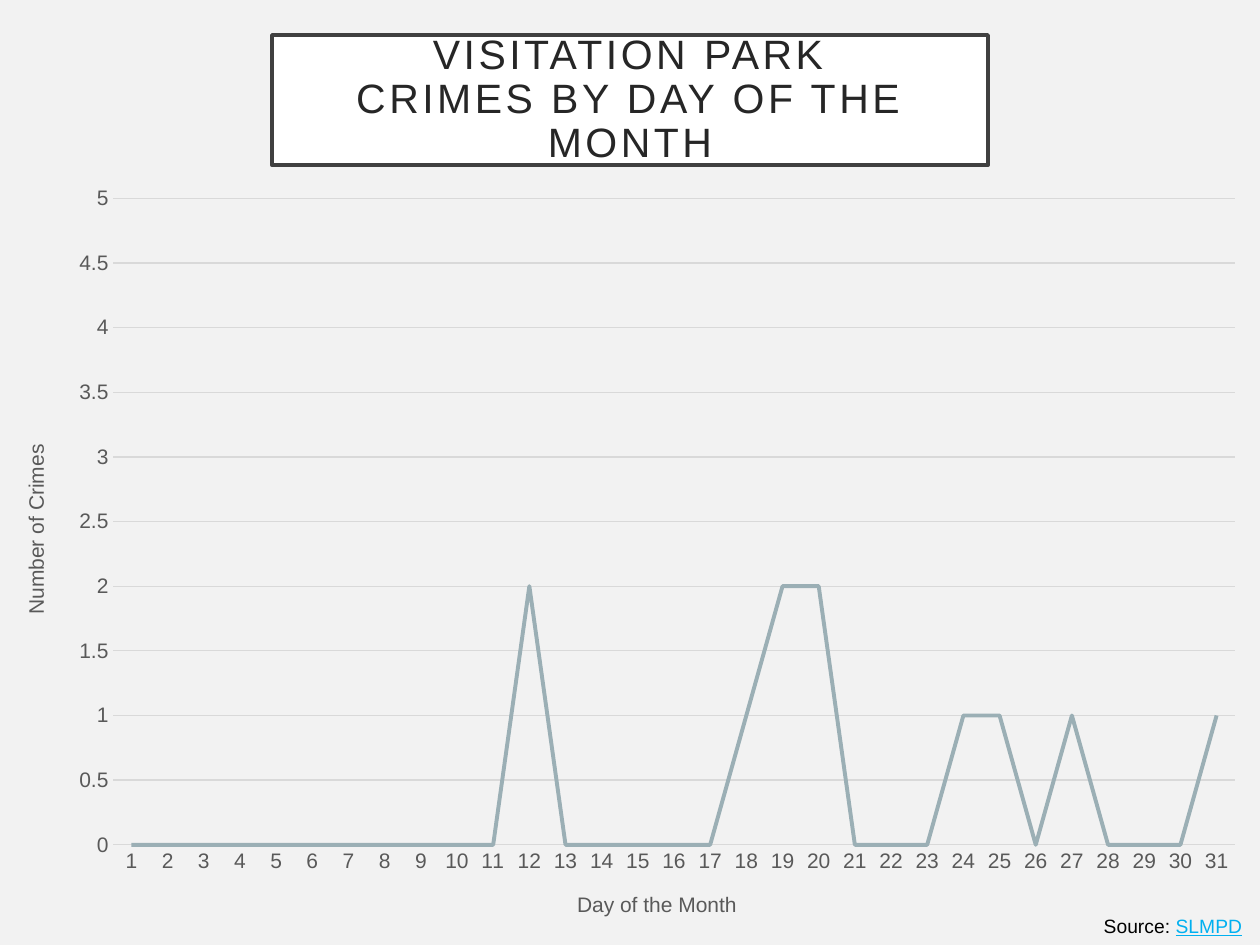
"""Build a slide with a line chart of crimes by day of the month."""
from copy import deepcopy
from pptx import Presentation, util as u
from pptx.chart.data import CategoryChartData
from pptx.dml.color import RGBColor
from pptx.enum import chart as ch, text as t
from pptx.oxml import parse_xml
from pptx.oxml.ns import qn

TITLE = "VISITATION PARK\vCRIMES BY DAY OF THE MONTH"
SOURCE = [("Source: ", "000000", False), ("SLMPD", "00B0F0", True)]
DAYS = 31
CRIMES = {12: 2, 18: 1, 19: 2, 20: 2, 24: 1, 25: 1, 27: 1, 31: 1}
AXES = {"category_axis": "Day of the Month", "value_axis": "Number of Crimes"}
PLOT = {"x": 0.09, "y": 0.03, "w": 0.89, "h": 0.84}
GREY, RULE, LINE = "595959", "D9D9D9", "9BAFB5"


def paint(item, color):
    item.fill.solid()
    item.fill.fore_color.rgb = RGBColor.from_string(color)


def stroke(line, color, width):
    paint(line, color)
    line.width = u.Pt(width)


def style(font, size, color, under=None):
    font.name, font.size, font.bold = "Arial", u.Pt(size), False
    font.color.rgb = RGBColor.from_string(color)
    font.underline = under


def write(para, words, size, color, under=None, gap=0):
    run = para.add_run()
    run.text = words
    style(run.font, size, color, under)
    if gap:
        run.font._element.set("spc", str(gap * 100))
    return run


def box(left, top, width, height):
    return [u.Inches(n) for n in (left, top, width, height)]


def add_source(slide):
    frame = slide.shapes.add_textbox(*box(8.66, 7.21, 1.3, 0.29)).text_frame
    frame.word_wrap = True
    para = frame.paragraphs[0]
    para.alignment = t.PP_ALIGN.CENTER
    for words, color, under in SOURCE:
        write(para, words, 11, color, under)


def add_title(slide):
    title = slide.shapes.title
    title.left, title.top, title.width, title.height = box(2.16, 0.28, 5.68, 1.03)
    paint(title, "FFFFFF")
    stroke(title.line, "404040", 2.5)
    frame = title.text_frame
    frame.word_wrap, frame.auto_size = True, t.MSO_AUTO_SIZE.NONE
    frame.vertical_anchor = t.MSO_ANCHOR.MIDDLE
    frame.margin_left = frame.margin_right = u.Inches(0.2)
    frame.margin_top = frame.margin_bottom = u.Inches(0.2)
    para = frame.paragraphs[0]
    para.alignment, para.line_spacing = t.PP_ALIGN.CENTER, 0.9
    for i, words in enumerate(TITLE.split("\v")):
        if i:
            para.add_line_break()
        run = write(para, words, 23.4, "262626", gap=2)
    para._p.find(qn("a:br")).append(deepcopy(run.font._element))


def place_plot(chart):
    area = chart._chartSpace.chart.plotArea
    for old in area.findall(qn("c:layout")):
        area.remove(old)
    modes = '<c:layoutTarget val="inner"/><c:xMode val="edge"/><c:yMode val="edge"/>'
    sizes = "".join(f'<c:{k} val="{v}"/>' for k, v in PLOT.items())
    area.insert(0, parse_xml(
        '<c:layout xmlns:c="http://schemas.openxmlformats.org/drawingml/2006/chart">'
        f"<c:manualLayout>{modes}{sizes}</c:manualLayout></c:layout>"))


def add_chart(slide):
    data = CategoryChartData()
    data.categories = [str(day) for day in range(1, DAYS + 1)]
    data.add_series("Series 1", [CRIMES.get(day, 0) for day in range(1, DAYS + 1)])
    chart = slide.shapes.add_chart(
        ch.XL_CHART_TYPE.LINE, *box(0, 1.39, 10, 6.11), data).chart
    chart.has_legend = chart.has_title = False
    style(chart.font, 12, "000000")
    for name, words in AXES.items():
        axis = getattr(chart, name)
        write(axis.axis_title.text_frame.paragraphs[0], words, 12, GREY)
        axis.major_tick_mark = axis.minor_tick_mark = ch.XL_TICK_MARK.NONE
        style(axis.tick_labels.font, 12, GREY)
    days, count = chart.category_axis, chart.value_axis
    stroke(days.format.line, RULE, 0.75)
    count.format.line.fill.background()
    count.minimum_scale, count.maximum_scale, count.major_unit = 0, 5, 0.5
    stroke(count.major_gridlines.format.line, RULE, 0.75)
    plot = chart.plots[0]
    plot.vary_by_categories = False
    line = plot.series[0]
    line.smooth = False
    line.marker.style = ch.XL_MARKER_STYLE.NONE
    stroke(line.format.line, LINE, 2.25)
    place_plot(chart)


def paint_line_fix():
    return None


def main():
    deck = Presentation()
    deck.slide_width, deck.slide_height = u.Inches(10), u.Inches(7.5)
    slide = deck.slides.add_slide(deck.slide_layouts[5])
    paint(slide.background, "F2F2F2")
    add_source(slide)
    add_title(slide)
    add_chart(slide)
    deck.save("out.pptx")


if __name__ == "__main__":
    main()
